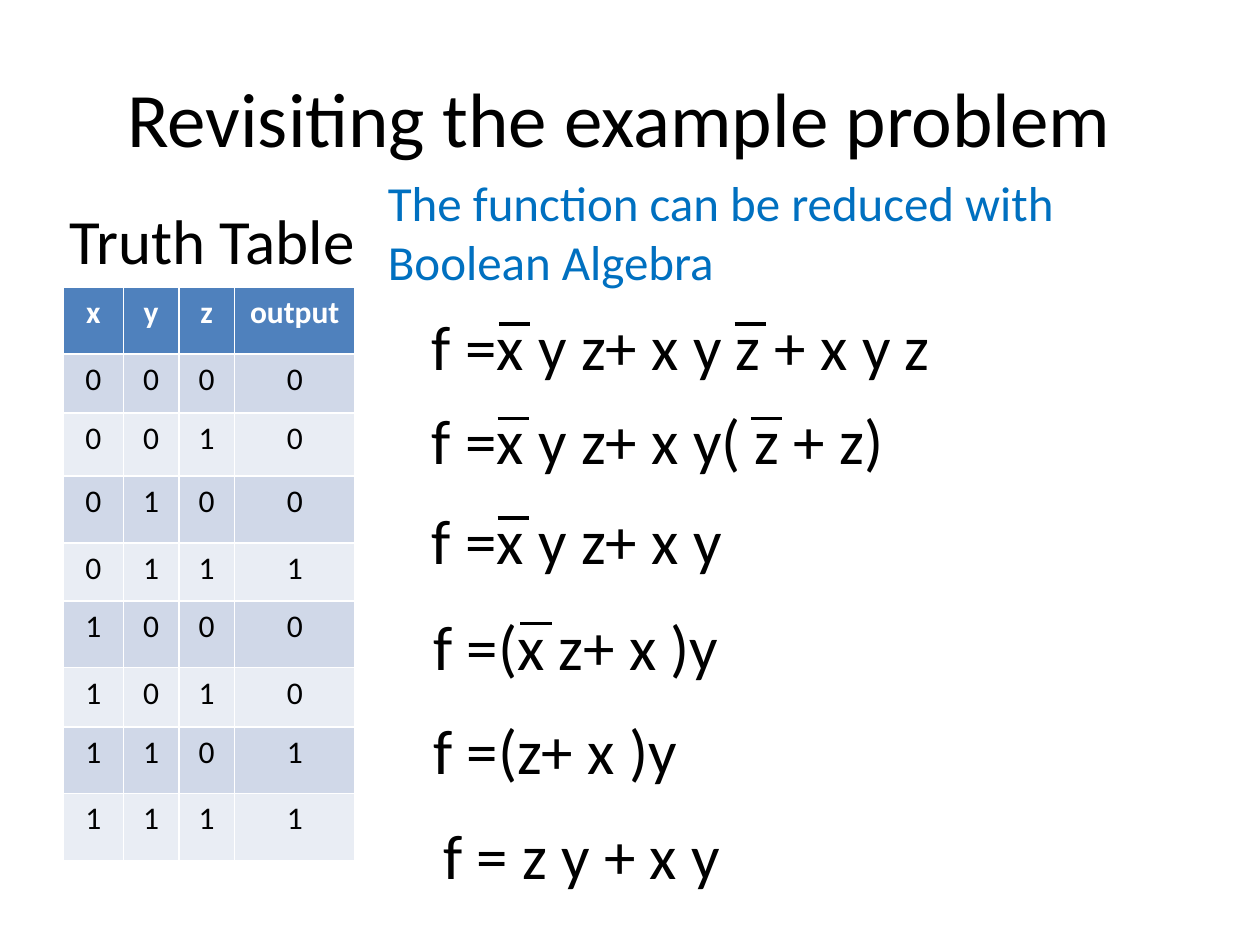
from lxml.etree import SubElement
from pptx import Presentation
from pptx.dml.color import RGBColor
from pptx.enum.shapes import MSO_CONNECTOR
from pptx.enum.text import MSO_ANCHOR, MSO_AUTO_SIZE, PP_ALIGN
from pptx.oxml.ns import qn
from pptx.util import Inches, Pt

BLACK = RGBColor(0x00, 0x00, 0x00)
WHITE = RGBColor(0xFF, 0xFF, 0xFF)
BLUE = RGBColor(0x00, 0x70, 0xC0)
HEADER_FILL = RGBColor(0x4F, 0x81, 0xBD)
BAND_FILLS = (RGBColor(0xE9, 0xED, 0xF4), RGBColor(0xD0, 0xD8, 0xE8))

TITLE = "Revisiting the example problem"
TRUTH_TABLE = ["x y z output".split()] + [
    list(row) for row in
    ("0000", "0010", "0100", "0111", "1000", "1010", "1101", "1111")
]
COLUMN_WIDTHS = (0.48, 0.44, 0.44, 0.96)
ROW_HEIGHTS = (0.53, 0.47, 0.5, 0.53, 0.46, 0.53, 0.47, 0.53, 0.53)

# text, left, top, width, left ends of the bars over negated variables
EQUATIONS = [
    ("f =x y z+ x y z + x y z", 3.33, 2.39, 4.25, (3.96, 5.83)),
    ("f =x y z+ x y( z + z)", 3.33, 3.14, 4.25, (3.95, 5.96)),
    ("f =x y z+ x y", 3.33, 3.93, 4.25, (3.95,)),
    ("f =(x z+ x )y", 3.34, 4.77, 2.61, (4.13,)),
    ("f =(z+ x )y", 3.34, 5.6, 2.61, ()),
    ("f = z y + x y", 3.42, 6.43, 2.61, ()),
]
LINE_HEIGHT = 0.71
BAR_DROP, BAR_LENGTH = 0.18, 0.25


def format_text(paragraph, size, color=BLACK, bold=False):
    style = {"name": "Calibri", "size": Pt(size), "bold": bold}
    for run in paragraph.runs:
        for name, value in style.items():
            setattr(run.font, name, value)
        run.font.color.rgb = color


def add_text(shapes, text, box, size, color=BLACK, grow=True):
    shape = shapes.add_textbox(*map(Inches, box))
    frame = shape.text_frame
    frame.word_wrap = True
    frame.auto_size = MSO_AUTO_SIZE.SHAPE_TO_FIT_TEXT if grow else MSO_AUTO_SIZE.NONE
    frame.text = text
    format_text(frame.paragraphs[0], size, color)
    return frame.paragraphs[0]


def add_bar(shapes, left, top):
    bar = shapes.add_connector(
        MSO_CONNECTOR.STRAIGHT,
        *map(Inches, (left, top, left + BAR_LENGTH, top)))
    bar.line.color.rgb = BLACK
    bar.line.width = Pt(2)
    SubElement(bar._element.spPr, qn("a:effectLst"))


def add_truth_table(shapes):
    box = (0.5, 2.28, sum(COLUMN_WIDTHS), sum(ROW_HEIGHTS))
    table = shapes.add_table(
        len(TRUTH_TABLE), len(COLUMN_WIDTHS), *map(Inches, box)).table
    for column, width in zip(table.columns, COLUMN_WIDTHS):
        column.width = Inches(width)
    for index, (row, height) in enumerate(zip(table.rows, ROW_HEIGHTS)):
        row.height = Inches(height)
        is_header = index == 0
        for cell, value in zip(row.cells, TRUTH_TABLE[index]):
            cell.text = value
            cell.fill.solid()
            cell.fill.fore_color.rgb = HEADER_FILL if is_header else BAND_FILLS[index % 2]
            paragraph = cell.text_frame.paragraphs[0]
            paragraph.alignment = PP_ALIGN.CENTER
            format_text(paragraph, 18, WHITE if is_header else BLACK, is_header)


def add_equation(shapes, text, left, top, width, bars):
    """Write one equation, grouped with its bars when it has any."""
    target = shapes.add_group_shape().shapes if bars else shapes
    add_text(target, text, (left, top, width, LINE_HEIGHT), 36)
    for bar_left in bars:
        add_bar(target, bar_left, top + BAR_DROP)


def main():
    presentation = Presentation()
    presentation.slide_width, presentation.slide_height = Inches(10), Inches(7.5)
    slide = presentation.slides.add_slide(presentation.slide_layouts[5])
    shapes = slide.shapes

    title = shapes.title
    for name, value in zip(("left", "top", "width", "height"), (0.34, 0.3, 9.15, 1.25)):
        setattr(title, name, Inches(value))
    title.text_frame.text = TITLE
    title.text_frame.vertical_anchor = MSO_ANCHOR.MIDDLE
    title.text_frame.paragraphs[0].alignment = PP_ALIGN.CENTER
    format_text(title.text_frame.paragraphs[0], 44)

    add_text(shapes, " Truth Table", (0.34, 1.55, 2.63, LINE_HEIGHT), 36)
    add_truth_table(shapes)
    summary = add_text(
        shapes, "The function can be reduced with Boolean Algebra",
        (2.98, 1.32, 6.85, 1.06), 28, BLUE, grow=False)
    summary.space_before = Pt(5.6)
    for equation in EQUATIONS:
        add_equation(shapes, *equation)

    presentation.save("out.pptx")


if __name__ == "__main__":
    main()
